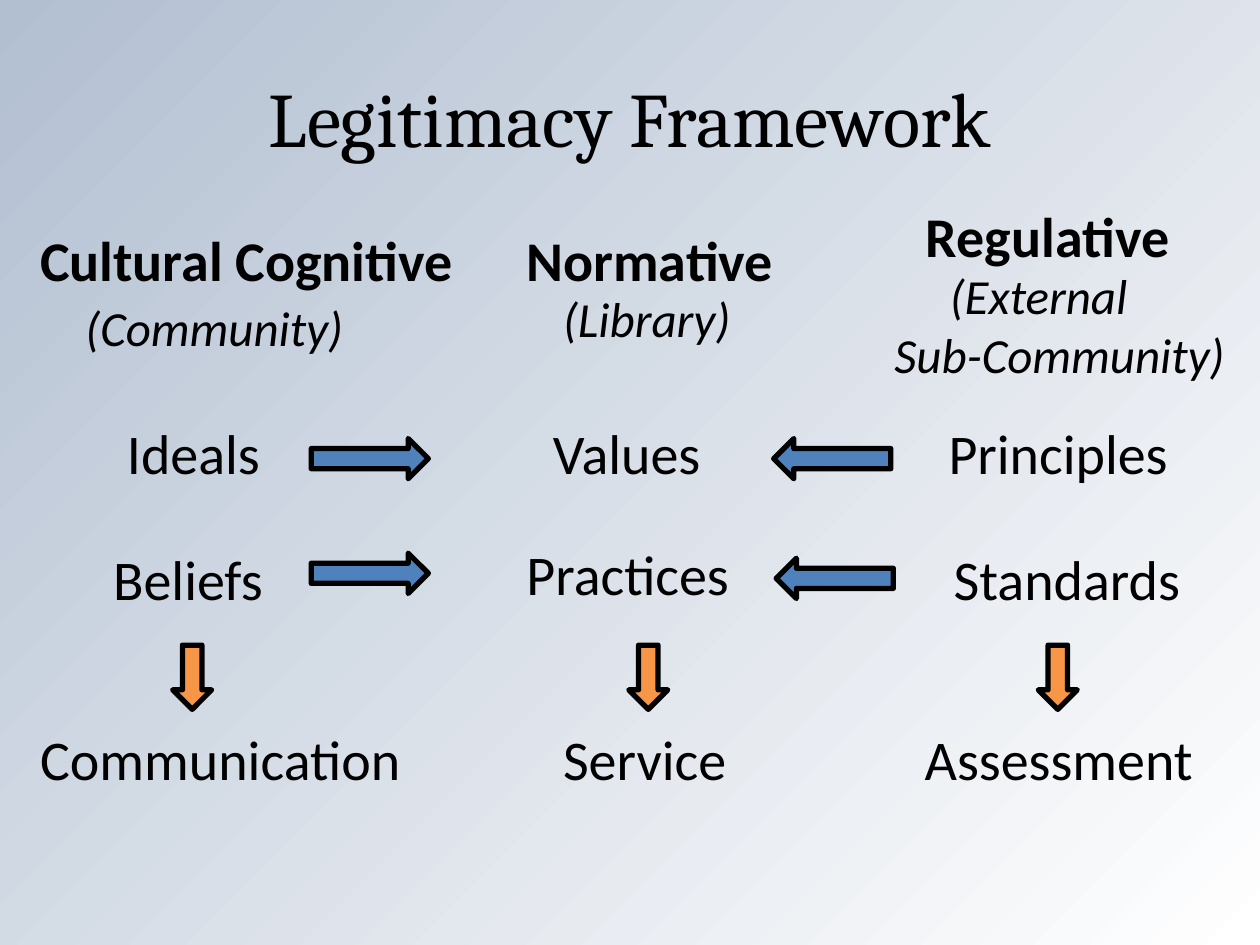
from pptx import Presentation
from pptx.dml.color import RGBColor
from pptx.enum.shapes import MSO_SHAPE
from pptx.enum.text import MSO_ANCHOR, PP_ALIGN
from pptx.util import Inches, Pt

COLORS = {
    "text": "000000",
    "outline": "000000",
    "influence": "4F81BD",
    "outcome": "F79646",
    "sky": "B2BFD1",
    "white": "FFFFFF",
}

# Row positions
IDEAS_TOP, OUTCOME_TOP = 3.27, 5.7

# Left, top, width of each label
PILLARS = [
    ("Cultural Cognitive", 0.22, 1.74, 3.65),
    ("Normative", 4.08, 1.74, 2.22),
    ("Regulative", 7.25, 1.55, 2.31),
]
ACTORS = [
    ("(Community)", 0.58, 2.31, 2.74),
    ("(Library)", 4.37, 2.24, 1.65),
]
ELEMENTS = [
    ("Ideals", 0.91, IDEAS_TOP, 1.4),
    ("Values", 4.29, IDEAS_TOP, 1.54),
    ("Principles", 7.43, IDEAS_TOP, 2.37),
    ("Beliefs", 0.8, 4.27, 1.67),
    ("Practices", 4.08, 4.23, 2.12),
    ("Standards", 7.47, 4.27, 2.29),
    ("Communication", 0.22, OUTCOME_TOP, 3.1),
    ("Service", 4.37, OUTCOME_TOP, 1.55),
    ("Assessment", 7.24, OUTCOME_TOP, 2.52),
]

# Left, top, rotation of each arrow towards the middle column
INFLUENCES = [(2.47, 3.48, 0), (2.47, 4.39, 0), (6.14, 3.48, 180), (6.16, 4.43, 180)]
OUTCOME_LEFTS = [1.27, 4.89, 8.14]


def rgb(name):
    return RGBColor.from_string(COLORS[name])


def paint_background(slide):
    fill = slide.background.fill
    fill.gradient()
    fill.gradient_angle = 315
    for stop, name in zip(fill.gradient_stops, ("sky", "white")):
        stop.color.rgb = rgb(name)


def add_label(slide, text, left, top, width, height=0.64, size=32,
              font="Calibri", bold=False, italic=False):
    label = slide.shapes.add_textbox(
        Inches(left), Inches(top), Inches(width), Inches(height))
    frame = label.text_frame
    frame.word_wrap = True
    frame.text = text
    for paragraph in frame.paragraphs:
        paragraph.font.name = font
        paragraph.font.size = Pt(size)
        paragraph.font.bold = bold
        paragraph.font.italic = italic
        paragraph.font.color.rgb = rgb("text")
    return frame


def add_title(slide, text):
    frame = add_label(slide, text, 0.5, 0.3, 9, 1.25, size=44, font="Cambria")
    frame.vertical_anchor = MSO_ANCHOR.MIDDLE
    frame.paragraphs[0].alignment = PP_ALIGN.CENTER


def add_arrow(slide, left, top, width, height, color, rotation):
    arrow = slide.shapes.add_shape(
        MSO_SHAPE.RIGHT_ARROW,
        Inches(left), Inches(top), Inches(width), Inches(height))
    arrow.rotation = rotation
    arrow.shadow.inherit = False
    arrow.fill.solid()
    arrow.fill.fore_color.rgb = rgb(color)
    arrow.line.color.rgb = rgb("outline")
    arrow.line.width = Pt(3)


def main():
    prs = Presentation()
    prs.slide_width, prs.slide_height = Inches(10), Inches(7.5)
    slide = prs.slides.add_slide(prs.slide_layouts[6])
    paint_background(slide)
    add_title(slide, "Legitimacy Framework")

    # Pillars and the actors behind them
    for pillar in PILLARS:
        add_label(slide, *pillar, bold=True)
    for actor in ACTORS:
        add_label(slide, *actor, height=0.57, size=28, italic=True)
    external = add_label(slide, "(External\nSub-Community)", 7, 2.06, 3.26,
                         height=1.04, size=28, italic=True)
    first_line = external.paragraphs[0]
    first_line._p.get_or_add_pPr().set("marL", str(Inches(0.44)))

    # Ideas, practices and outcomes
    for element in ELEMENTS:
        add_label(slide, *element)

    # Arrows towards the middle column and down to the outcomes
    for left, top, rotation in INFLUENCES:
        add_arrow(slide, left, top, 0.93, 0.32, "influence", rotation)
    for left in OUTCOME_LEFTS:
        add_arrow(slide, left, 5.22, 0.51, 0.31, "outcome", 90)

    prs.save("out.pptx")


if __name__ == "__main__":
    main()
